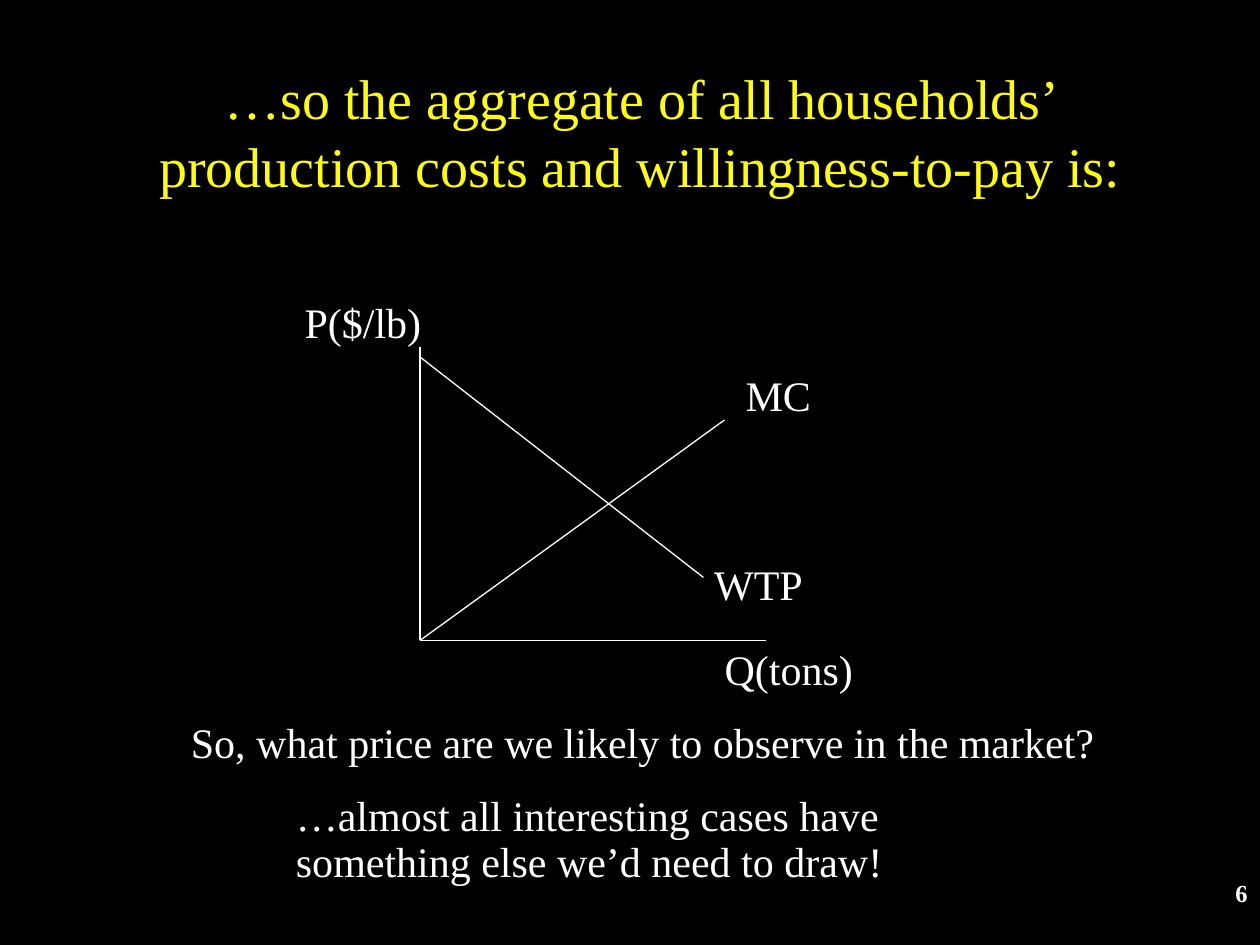
"""Build the slide on aggregate production costs and willingness-to-pay."""
from dataclasses import dataclass

from lxml import etree
from pptx import Presentation
from pptx.dml.color import RGBColor
from pptx.enum.shapes import MSO_CONNECTOR
from pptx.enum.text import MSO_ANCHOR, PP_ALIGN
from pptx.oxml.ns import qn
from pptx.slide import Slide
from pptx.util import Pt

STRAIGHT = MSO_CONNECTOR.STRAIGHT
TOP, MIDDLE = MSO_ANCHOR.TOP, MSO_ANCHOR.MIDDLE
LEFT, CENTER, RIGHT = PP_ALIGN.LEFT, PP_ALIGN.CENTER, PP_ALIGN.RIGHT


@dataclass(frozen=True)
class Theme:
    font: str = "Times New Roman"
    background: RGBColor = RGBColor(0, 0, 0)
    ink: RGBColor = RGBColor(255, 255, 255)
    accent: RGBColor = RGBColor(255, 255, 0)
    title_size: float = 32
    body_size: float = 24
    number_size: float = 14
    line_width: float = 0.75


THEME = Theme()


@dataclass(frozen=True)
class Label:
    text: str
    left: float
    top: float
    width: float
    height: float
    size: float = THEME.body_size
    color: RGBColor = THEME.ink
    align: PP_ALIGN = LEFT
    anchor: MSO_ANCHOR = TOP
    bold: bool = False
    wrap: bool = True
    spacing: float = 1.0


@dataclass(frozen=True)
class Segment:
    x1: float
    y1: float
    x2: float
    y2: float


def axis_label(text: str, left: float, top: float, width: float) -> Label:
    """Describe a one-line label of the diagram."""
    return Label(text, left, top, width, 36, wrap=False)


def remark(text: str, left: float, top: float, width: float, height: float) -> Label:
    """Describe a tightly spaced remark below the diagram."""
    return Label(text, left, top, width, height, spacing=0.9)


ORIGIN_X, ORIGIN_Y = 240, 366

SEGMENTS = [
    Segment(ORIGIN_X, 198, ORIGIN_X, ORIGIN_Y),
    Segment(ORIGIN_X, ORIGIN_Y, 438, ORIGIN_Y),
    Segment(ORIGIN_X, ORIGIN_Y, 414, 240),
    Segment(ORIGIN_X, 204, 402, 330),
]

LABELS = [
    Label("6", 630, 498, 90, 24, THEME.number_size, align=RIGHT, bold=True),
    Label("…so the aggregate of all households’ production costs and willingness-to-pay is:",
          72, 36, 588, 78, THEME.title_size, THEME.accent, CENTER, MIDDLE),
    axis_label("P($/lb)", 167, 166, 81),
    axis_label("Q(tons)", 407, 364, 88),
    axis_label("MC", 419, 207.5, 52),
    axis_label("WTP", 401, 315.5, 65),
    remark("So, what price are we likely to observe in the market?", 102, 409, 564, 33),
    remark("…almost all interesting cases have something else we’d need to draw!",
           162, 451, 420, 59),
]


def draw_segment(s: Slide, seg: Segment) -> None:
    """Draw one axis or curve."""
    line = s.shapes.add_connector(STRAIGHT, Pt(seg.x1), Pt(seg.y1), Pt(seg.x2), Pt(seg.y2))
    line.line.color.rgb = THEME.ink
    line.line.width = Pt(THEME.line_width)
    etree.SubElement(line._element.spPr, qn("a:effectLst"))


def draw_label(s: Slide, label: Label) -> None:
    """Draw one text box."""
    sp = s.shapes.add_textbox(Pt(label.left), Pt(label.top), Pt(label.width), Pt(label.height))
    tf = sp.text_frame
    tf.word_wrap = label.wrap
    tf.vertical_anchor = label.anchor
    p = tf.paragraphs[0]
    p.text = label.text
    p.alignment = label.align
    p.line_spacing = label.spacing
    p.font.name = THEME.font
    p.font.size = Pt(label.size)
    p.font.bold = label.bold
    p.font.color.rgb = label.color


def main() -> None:
    """Create and save the presentation."""
    prs = Presentation()
    prs.slide_width, prs.slide_height = Pt(720), Pt(540)
    s = prs.slides.add_slide(prs.slide_layouts[6])
    s.background.fill.solid()
    s.background.fill.fore_color.rgb = THEME.background
    for seg in SEGMENTS:
        draw_segment(s, seg)
    for label in LABELS:
        draw_label(s, label)
    prs.save("out.pptx")


if __name__ == "__main__":
    main()
